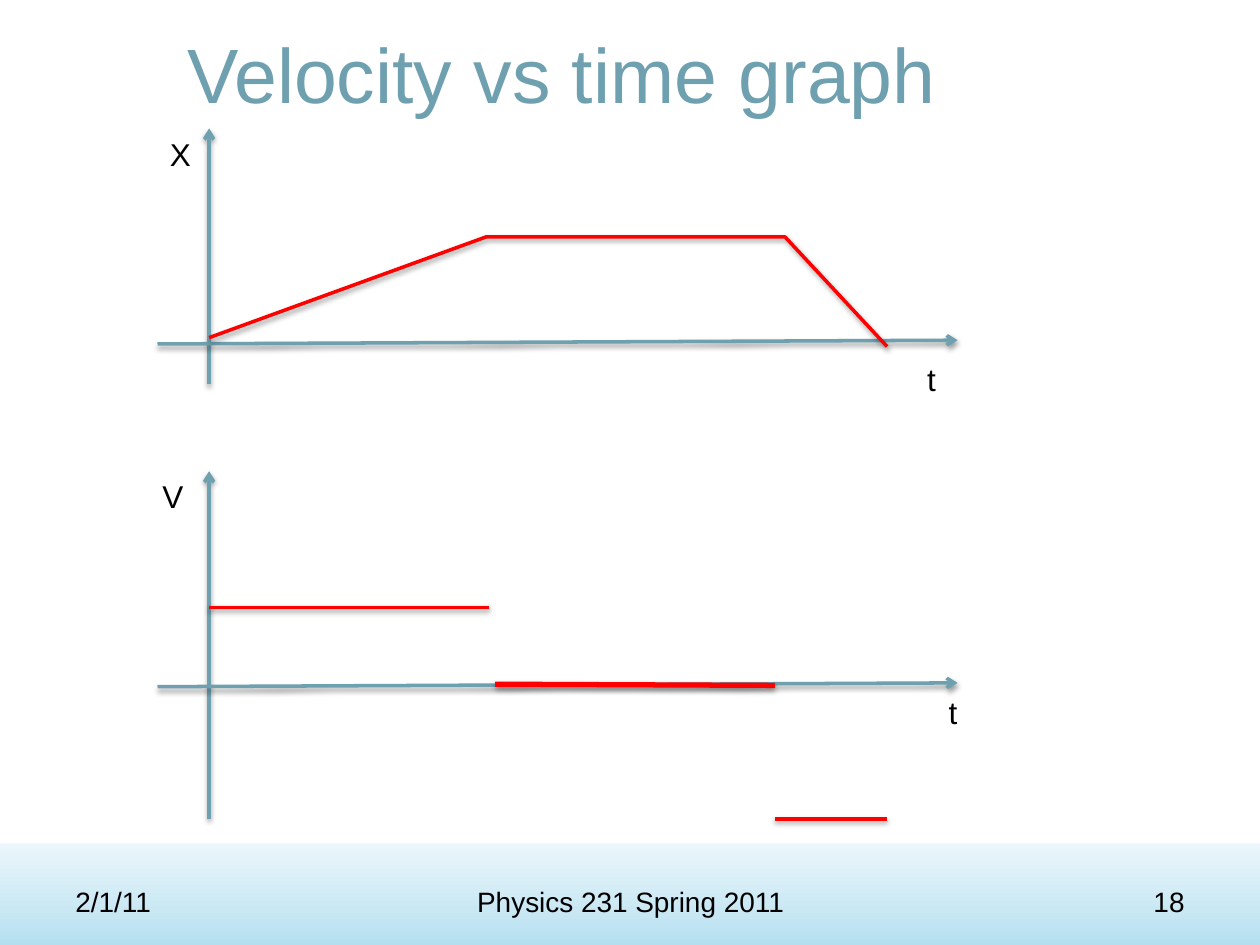
from copy import deepcopy

from pptx import Presentation
from pptx.dml.color import RGBColor
from pptx.enum.shapes import MSO_CONNECTOR, MSO_SHAPE
from pptx.enum.text import MSO_ANCHOR, MSO_AUTO_SIZE, PP_ALIGN
from pptx.oxml import parse_xml
from pptx.oxml.ns import nsdecls, qn
from pptx.util import Inches, Pt

# Content
TITLE = "Velocity vs time graph"
FOOTERS = [
    ("2/1/11", 0.5, 2.33, PP_ALIGN.LEFT),
    ("Physics 231 Spring 2011", 3.42, 3.17, PP_ALIGN.CENTER),
    ("18", 7.17, 2.33, PP_ALIGN.RIGHT),
]
# Each graph: top and bottom of its vertical axis, then its labels
GRAPHS = [
    {"top": 1.02, "bottom": 3.05,
     "labels": [("X", 1.25, 1.02, 0.37), ("t", 7.26, 2.81, 0.27)]},
    {"top": 3.74, "bottom": 6.5,
     "labels": [("V", 1.19, 3.74, 0.38), ("t", 7.43, 5.45, 0.27)]},
]
POSITION_CURVE = [(1.66, 2.68), (3.86, 1.88), (6.23, 1.88), (7.04, 2.75)]
VELOCITY_STEPS = [  # start, end, width in points
    ((1.66, 4.82), (3.88, 4.82), 2),
    ((3.93, 5.43), (6.15, 5.44), 3),
    ((6.15, 6.5), (7.04, 6.5), 2),
]
BAND_STOPS = [(0, "B4DFF0"), (0.35, "CAE8F4"), (1, "EAF6FB")]

TEAL, RED, BLACK = "6EA0B0", "FF0000", "000000"
FONT = "Arial"
ORIGIN_X, AXIS_LEFT, AXIS_RIGHT = 1.66, 1.25, 7.6
AXIS_DROP, AXIS_TILT = 1.71, 0.03  # time axis below the top, and its rise


def color(value):
    return RGBColor.from_string(value)


def add_shadow(shape):
    shape._element.spPr.append(parse_xml(
        f'<a:effectLst {nsdecls("a")}>'
        '<a:outerShdw blurRad="39370" dist="20320" dir="5400000" rotWithShape="0">'
        '<a:srgbClr val="000000"><a:alpha val="38000"/></a:srgbClr>'
        '</a:outerShdw></a:effectLst>'))


def style_line(shape, stroke, width):
    shape.line.color.rgb = color(stroke)
    shape.line.width = Pt(width)


def add_line(start, end, stroke, width=2, arrow=False):
    line = slide.shapes.add_connector(
        MSO_CONNECTOR.STRAIGHT, *(Inches(v) for v in start + end))
    style_line(line, stroke, width)
    if arrow:
        line.line._get_or_add_ln().append(
            parse_xml(f'<a:tailEnd {nsdecls("a")} type="arrow"/>'))
    add_shadow(line)


def write(shape, text, size=18, fill=BLACK, align=PP_ALIGN.LEFT,
          anchor=MSO_ANCHOR.TOP, wrap=True, grow=False):
    frame = shape.text_frame
    frame.word_wrap = wrap
    frame.auto_size = MSO_AUTO_SIZE.SHAPE_TO_FIT_TEXT if grow else MSO_AUTO_SIZE.NONE
    frame.vertical_anchor = anchor
    paragraph = frame.paragraphs[0]
    paragraph.alignment = align
    run = paragraph.add_run()
    run.text = text
    run.font.size = Pt(size)
    run.font.name = FONT
    run.font.color.rgb = color(fill)


def add_text(text, left, top, width, height=0.4, **style):
    box = slide.shapes.add_textbox(*(Inches(v) for v in (left, top, width, height)))
    write(box, text, **style)


prs = Presentation()
prs.slide_width, prs.slide_height = Inches(10), Inches(7.5)
slide = prs.slides.add_slide(prs.slide_layouts[5])

# Footer band, shaded from the bottom up
band = slide.shapes.add_shape(
    MSO_SHAPE.RECTANGLE, 0, Inches(6.7), Inches(10), Inches(0.8))
band.line.fill.background()
band.fill.gradient()
band.fill.gradient_angle = 90
stop_list = band._element.spPr.find(qn("a:gradFill")).find(qn("a:gsLst"))
stop_list.append(deepcopy(stop_list[-1]))
for stop, (position, shade) in zip(band.fill.gradient_stops, BAND_STOPS):
    stop.position = position
    stop.color.rgb = color(shade)
add_shadow(band)

# Title
title = slide.shapes.title
title.left, title.top = Inches(0.23), Inches(0.13)
title.width, title.height = Inches(8.46), Inches(0.89)
write(title, TITLE, size=44, fill=TEAL, align=PP_ALIGN.CENTER,
      anchor=MSO_ANCHOR.MIDDLE)

# Footer texts
for text, left, width, align in FOOTERS:
    add_text(text, left, 6.95, width, size=16, align=align,
             anchor=MSO_ANCHOR.MIDDLE)

# Axes and their labels
for graph in GRAPHS:
    time_y = graph["top"] + AXIS_DROP
    add_line((ORIGIN_X, graph["bottom"]), (ORIGIN_X, graph["top"]), TEAL, arrow=True)
    add_line((AXIS_LEFT, time_y), (AXIS_RIGHT, time_y - AXIS_TILT), TEAL, arrow=True)
    for text, left, top, width in graph["labels"]:
        add_text(text, left, top, width, wrap=False, grow=True)

# Position curve
points = [(Inches(x), Inches(y)) for x, y in POSITION_CURVE]
builder = slide.shapes.build_freeform(*points[0])
builder.add_line_segments(points[1:], close=False)
curve = builder.convert_to_shape()
curve.fill.background()
style_line(curve, RED, 2)
add_shadow(curve)

# Velocity steps
for start, end, width in VELOCITY_STEPS:
    add_line(start, end, RED, width)

prs.save("out.pptx")
